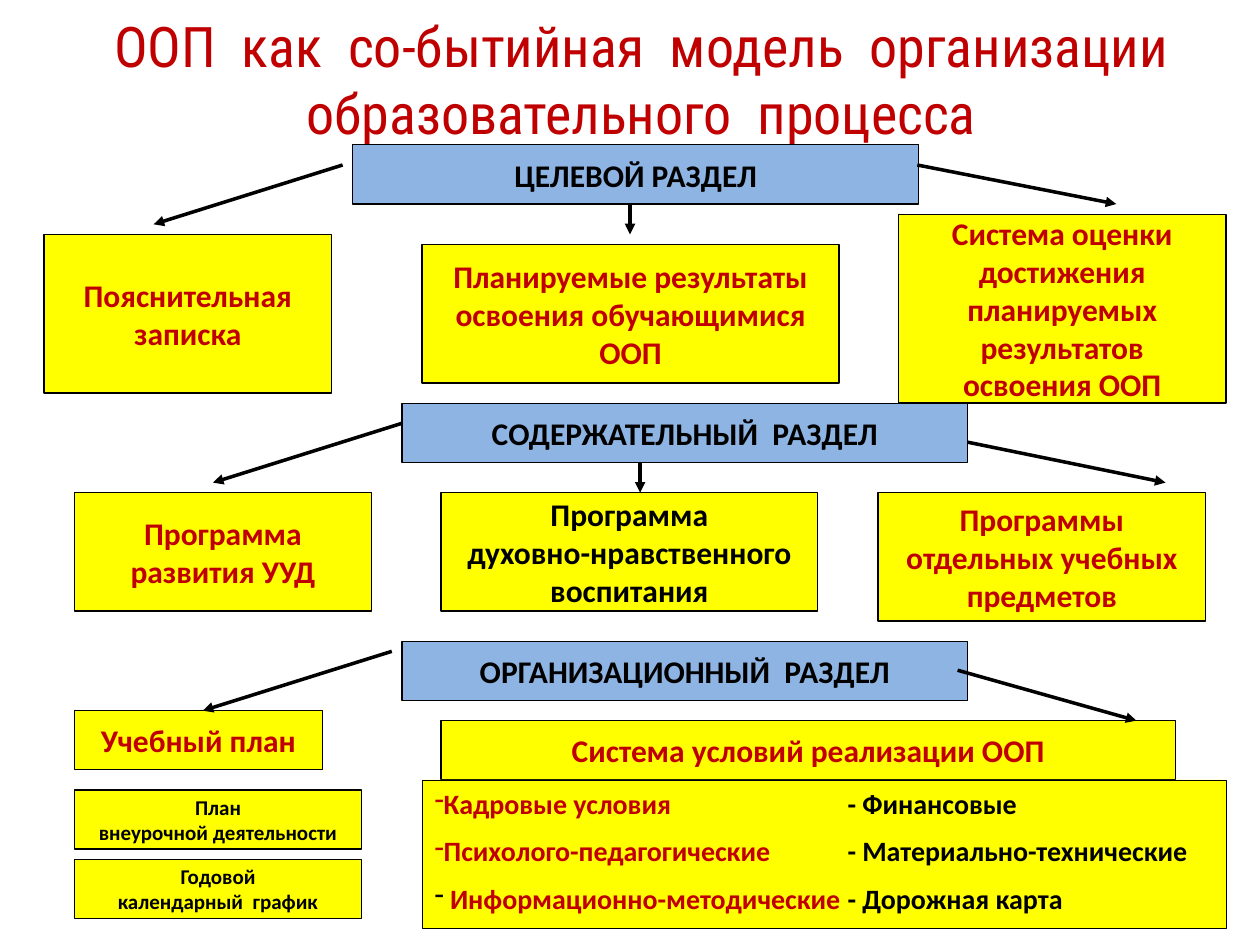
from lxml.etree import SubElement
from pptx import Presentation
from pptx.dml.color import RGBColor
from pptx.enum.shapes import MSO_CONNECTOR, MSO_SHAPE
from pptx.enum.text import MSO_ANCHOR, PP_ALIGN
from pptx.oxml.ns import qn
from pptx.util import Pt

COLORS = {"blue": "8EB4E3", "yellow": "FFFF00", "red": "C00000",
          "black": "000000", "white": "FFFFFF"}

TITLE = "ООП  как  со-бытийная  модель  организации образовательного  процесса"

# Section headings: text, left, top
SECTION_SIZE = (323.3, 33.8)
SECTIONS = [
    ("ЦЕЛЕВОЙ РАЗДЕЛ", 201.6, 82.8),
    ("СОДЕРЖАТЕЛЬНЫЙ  РАЗДЕЛ", 229.7, 230.4),
    ("ОРГАНИЗАЦИОННЫЙ  РАЗДЕЛ", 229.7, 366.5),
]

# Section parts: lines, (left, top, width, height), text colour, text size
PARTS = [
    (["Пояснительная", "записка"], (25.2, 133.9, 164.2, 90.7), "red", 18),
    (["Планируемые результаты", "освоения обучающимися", "ООП"],
     (241.2, 139.7, 238.3, 79.2), "red", 18),
    (["Система оценки", "достижения", "планируемых", "результатов", "освоения ООП"],
     (513.4, 122.4, 187.2, 108), "red", 18),
    (["Программа", "развития УУД"], (42.5, 281.5, 169.9, 67.7), "red", 18),
    (["Программа", "духовно-нравственного", "воспитания"],
     (252, 281.5, 215.3, 67.7), "black", 18),
    (["Программы", "отдельных учебных", "предметов"],
     (501.8, 281.5, 187.2, 73.4), "red", 18),
    (["Учебный план"], (42.5, 406.1, 141.8, 33.8), "red", 18),
    (["План", "внеурочной деятельности"], (42.5, 451.4, 164.2, 33.8), "black", 12),
    (["Годовой", "календарный  график"], (42.5, 491, 164.2, 33.8), "black", 12),
    (["Система условий реализации ООП"], (252, 411.8, 419.8, 33.8), "red", 18),
]

# Conditions: bullet colour, left column, right column
CONDITIONS_BOX = (241.2, 445.7, 459.4, 85)
CONDITIONS_TAB = 236
CONDITIONS = [
    ("red", "Кадровые условия", "- Финансовые"),
    ("red", "Психолого-педагогические", "- Материально-технические"),
    ("black", " Информационно-методические", "- Дорожная карта"),
]

# Arrows: start x, start y, end x, end y
ARROWS = [
    (195.8, 94.3, 87.8, 128.2), (360, 116.6, 360, 133.9), (524.2, 94.3, 637.9, 116.6),
    (229.7, 241.9, 121.7, 275.8), (365.8, 264.2, 365.8, 281.5), (553, 252.7, 666, 275.8),
    (223.9, 372.2, 115.9, 406.1), (547.2, 383, 649.4, 411.8),
]


def rgb(name):
    return RGBColor.from_string(COLORS[name])


def add_run(paragraph, text, *, color="black", size=18, bold=True, font="Calibri"):
    run = paragraph.add_run()
    run.text = text
    run.font.name = font
    run.font.size = Pt(size)
    run.font.bold = bold
    run.font.color.rgb = rgb(color)


def add_box(slide, box, fill, line_width=0.75):
    shape = slide.shapes.add_shape(MSO_SHAPE.RECTANGLE, *map(Pt, box))
    shape.shadow.inherit = False
    shape.fill.solid()
    shape.fill.fore_color.rgb = rgb(fill)
    shape.line.color.rgb = rgb("black")
    shape.line.width = Pt(line_width)
    return shape


def add_label(slide, lines, box, fill, **text_format):
    frame = add_box(slide, box, fill).text_frame
    frame.word_wrap = False
    frame.vertical_anchor = MSO_ANCHOR.MIDDLE
    for index, line in enumerate(lines):
        paragraph = frame.add_paragraph() if index else frame.paragraphs[0]
        paragraph.alignment = PP_ALIGN.CENTER
        add_run(paragraph, line, **text_format)


def add_arrow(slide, points):
    connector = slide.shapes.add_connector(MSO_CONNECTOR.STRAIGHT, *map(Pt, points))
    connector.line.color.rgb = rgb("black")
    connector.line.width = Pt(2)
    SubElement(connector.line._get_or_add_ln(), qn("a:tailEnd"), type="triangle")
    SubElement(connector._element.spPr, qn("a:effectLst"))


def set_bullet_and_tab(paragraph, color):
    properties = paragraph._p.get_or_add_pPr()
    properties.set("marL", "0")
    properties.set("indent", "0")
    bullet_color = SubElement(properties, qn("a:buClr"))
    SubElement(bullet_color, qn("a:srgbClr"), val=COLORS[color])
    SubElement(properties, qn("a:buChar"), char="-")
    tabs = SubElement(properties, qn("a:tabLst"))
    SubElement(tabs, qn("a:tab"), pos=str(Pt(CONDITIONS_TAB)), algn="l")


def add_conditions(slide):
    frame = add_box(slide, CONDITIONS_BOX, "yellow", 0.25).text_frame
    frame.word_wrap = True
    frame.vertical_anchor = MSO_ANCHOR.TOP
    for index, (bullet, left, right) in enumerate(CONDITIONS):
        paragraph = frame.add_paragraph() if index else frame.paragraphs[0]
        paragraph.alignment = PP_ALIGN.LEFT
        paragraph.space_before = Pt(8)
        set_bullet_and_tab(paragraph, bullet)
        add_run(paragraph, left, color="red", size=16)
        add_run(paragraph, "\t" + right, size=16)


def add_title(slide):
    title = slide.shapes.title
    title.left, title.top, title.width, title.height = map(Pt, (28.1, 0, 677.5, 90))
    frame = title.text_frame
    frame.word_wrap = True
    frame.vertical_anchor = MSO_ANCHOR.MIDDLE
    paragraph = frame.paragraphs[0]
    paragraph.alignment = PP_ALIGN.CENTER
    add_run(paragraph, TITLE, color="red", size=32, bold=False, font="Roboto Condensed")


def main():
    presentation = Presentation()
    presentation.slide_width, presentation.slide_height = Pt(720), Pt(540)
    slide = presentation.slides.add_slide(presentation.slide_layouts[5])
    slide.background.fill.solid()
    slide.background.fill.fore_color.rgb = rgb("white")

    add_title(slide)
    for text, left, top in SECTIONS:
        add_label(slide, [text], (left, top, *SECTION_SIZE), "blue")
    for lines, box, color, size in PARTS:
        add_label(slide, lines, box, "yellow", color=color, size=size)
    add_conditions(slide)
    for points in ARROWS:
        add_arrow(slide, points)

    presentation.save("out.pptx")


if __name__ == "__main__":
    main()
